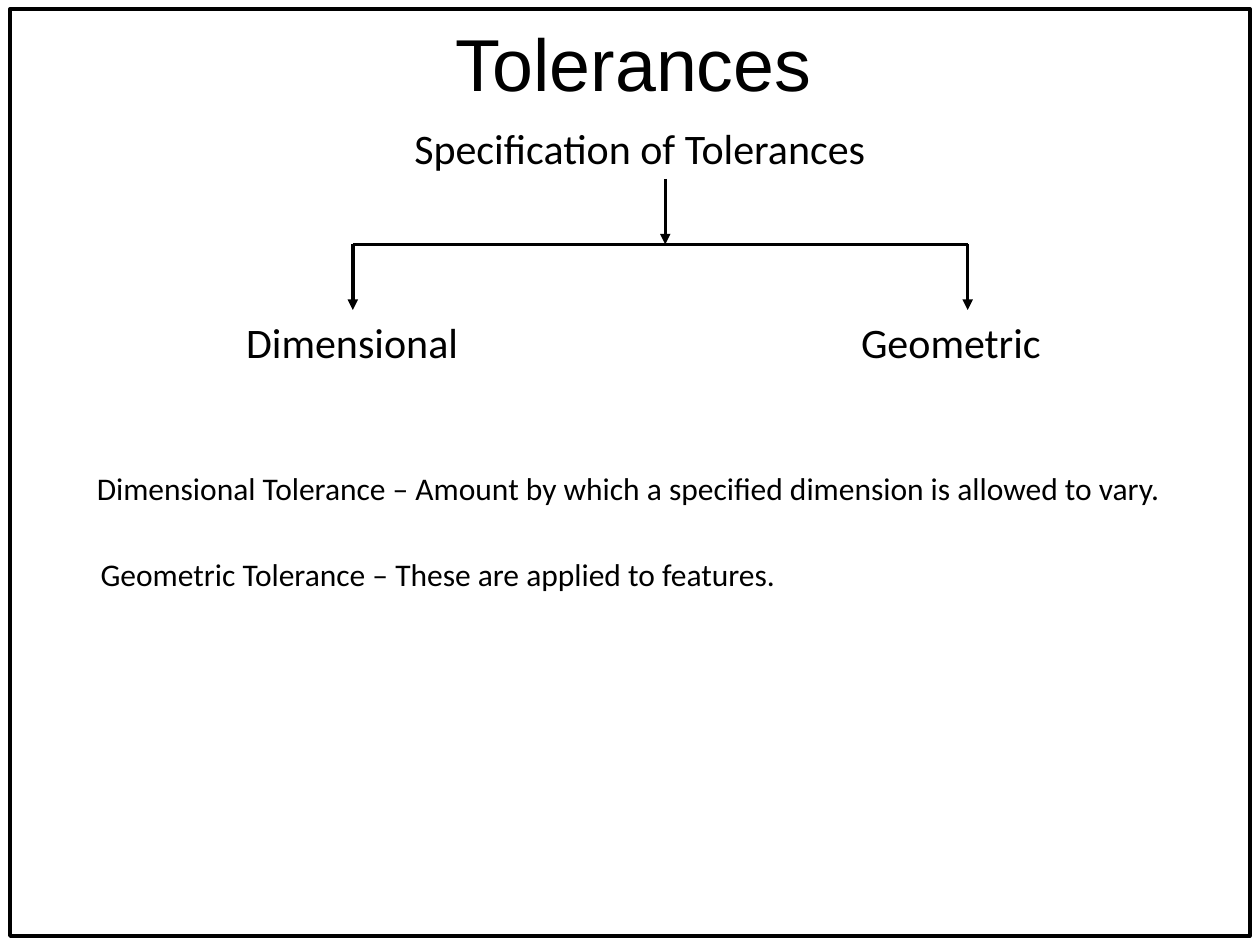
from pptx import Presentation
from pptx import util as u
from pptx.dml.color import RGBColor
from pptx.enum import shapes, text
from pptx.oxml.ns import qn
from lxml import etree

THEME = {
    "ink": RGBColor(0, 0, 0),
    "line": 2,
    "title": ("Arial", 42),
    "node": ("Calibri", 24),
    "note": ("Calibri", 18),
}
FRAME = (0.08, 0.07, 9.84, 7.36)
TITLE = ("Tolerances", 3.52, 0.09, 3.05, 0.81)
ROOT = ("Specification of Tolerances", 3.19, 0.92, 4.17, 0.5)
LEAVES = [("Dimensional", 2.8), ("Geometric", 7.68)]
NOTES = [
    ("Dimensional Tolerance – Amount by which a specified dimension is allowed to vary.",
     0.67, 3.67, 8.9, 0.4),
    ("Geometric Tolerance – These are applied to features.", 0.7, 4.36, 6.41, 0.4),
]
STEM, TOP, DROP = 5.28, 1.42, 0.52
LEAF = (1.89, 0.5)

deck = Presentation()
deck.slide_width, deck.slide_height = u.Inches(10), u.Inches(7.5)
slide = deck.slides.add_slide(deck.slide_layouts[6])


def ink(line):
    line.color.rgb = THEME["ink"]
    line.width = u.Pt(THEME["line"])


def label(words, x, y, w, h, style, wrap=True):
    box = slide.shapes.add_textbox(*map(u.Inches, (x, y, w, h)))
    frame = box.text_frame
    frame.word_wrap = wrap
    frame.auto_size = text.MSO_AUTO_SIZE.SHAPE_TO_FIT_TEXT
    run = frame.paragraphs[0].add_run()
    run.text = words
    name, size = THEME[style]
    run.font.name, run.font.size = name, u.Pt(size)
    run.font.color.rgb = THEME["ink"]


def link(x1, y1, x2, y2, arrow=True):
    wire = slide.shapes.add_connector(
        shapes.MSO_CONNECTOR.STRAIGHT, *map(u.Inches, (x1, y1, x2, y2)))
    ink(wire.line)
    if arrow:
        etree.SubElement(wire.line._get_or_add_ln(), qn("a:tailEnd"), type="triangle")
    etree.SubElement(wire._element.spPr, qn("a:effectLst"))


border = slide.shapes.add_shape(
    shapes.MSO_SHAPE.RECTANGLE, *map(u.Inches, FRAME))
border.shadow.inherit = False
border.fill.background()
ink(border.line)

label(*TITLE, "title", wrap=False)
label(*ROOT, "node")

bar = TOP + DROP
link(STEM, TOP, STEM, bar)
link(LEAVES[0][1], bar, LEAVES[-1][1], bar, arrow=False)
for words, x in LEAVES:
    link(x, bar, x, bar + DROP)
    label(words, x - LEAF[0] / 2, bar + DROP, *LEAF, "node")

for note in NOTES:
    label(*note, "note")

deck.save("out.pptx")
